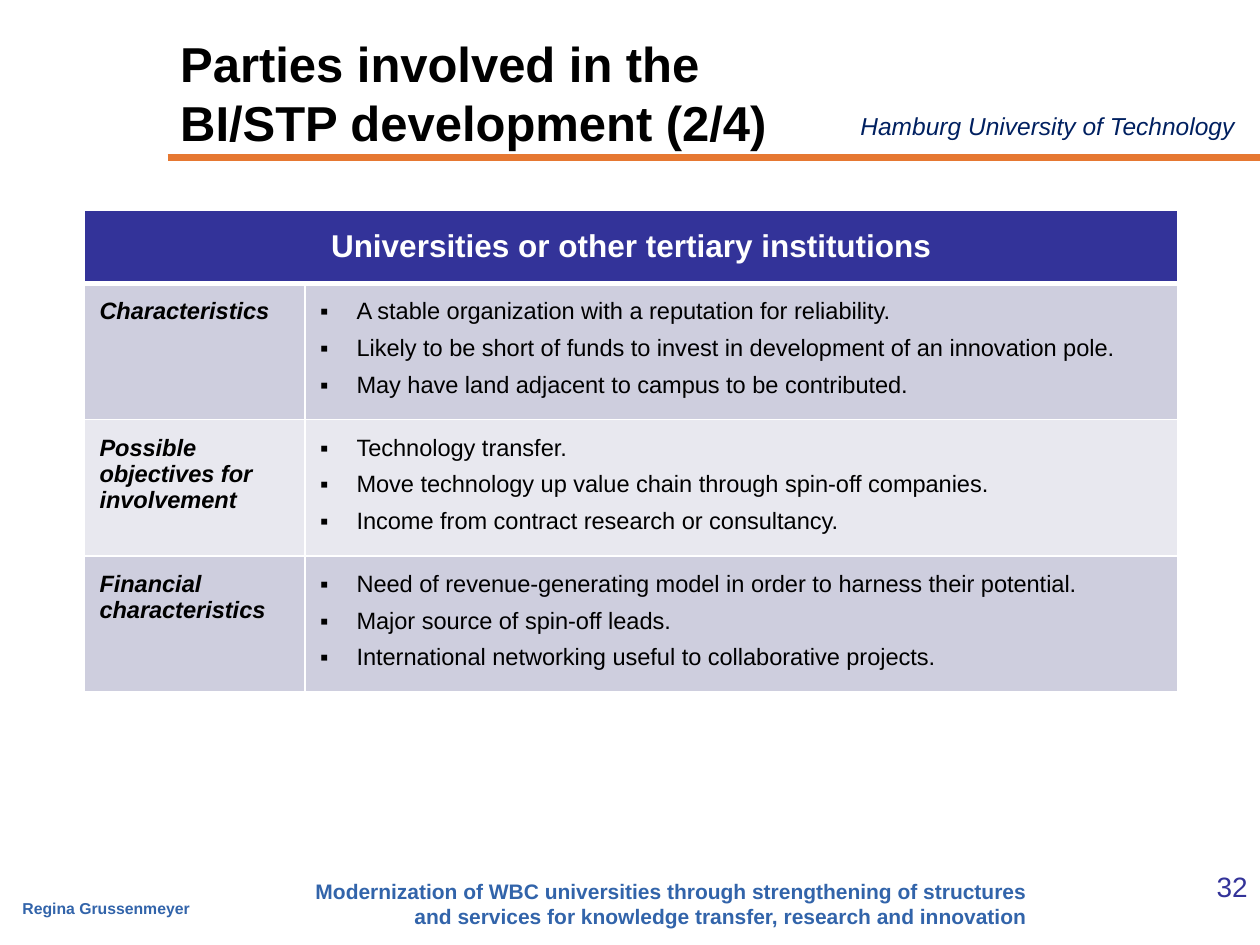
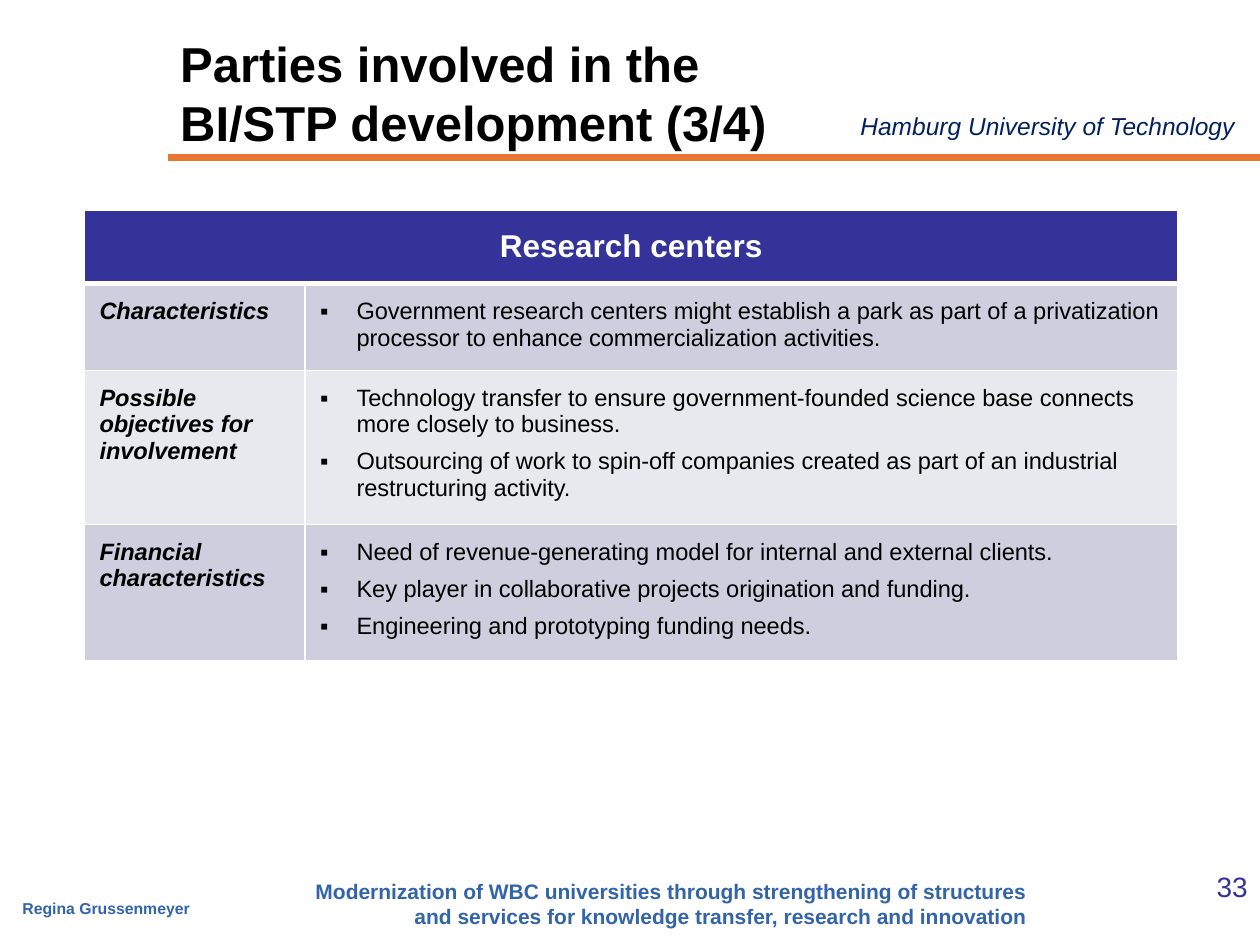
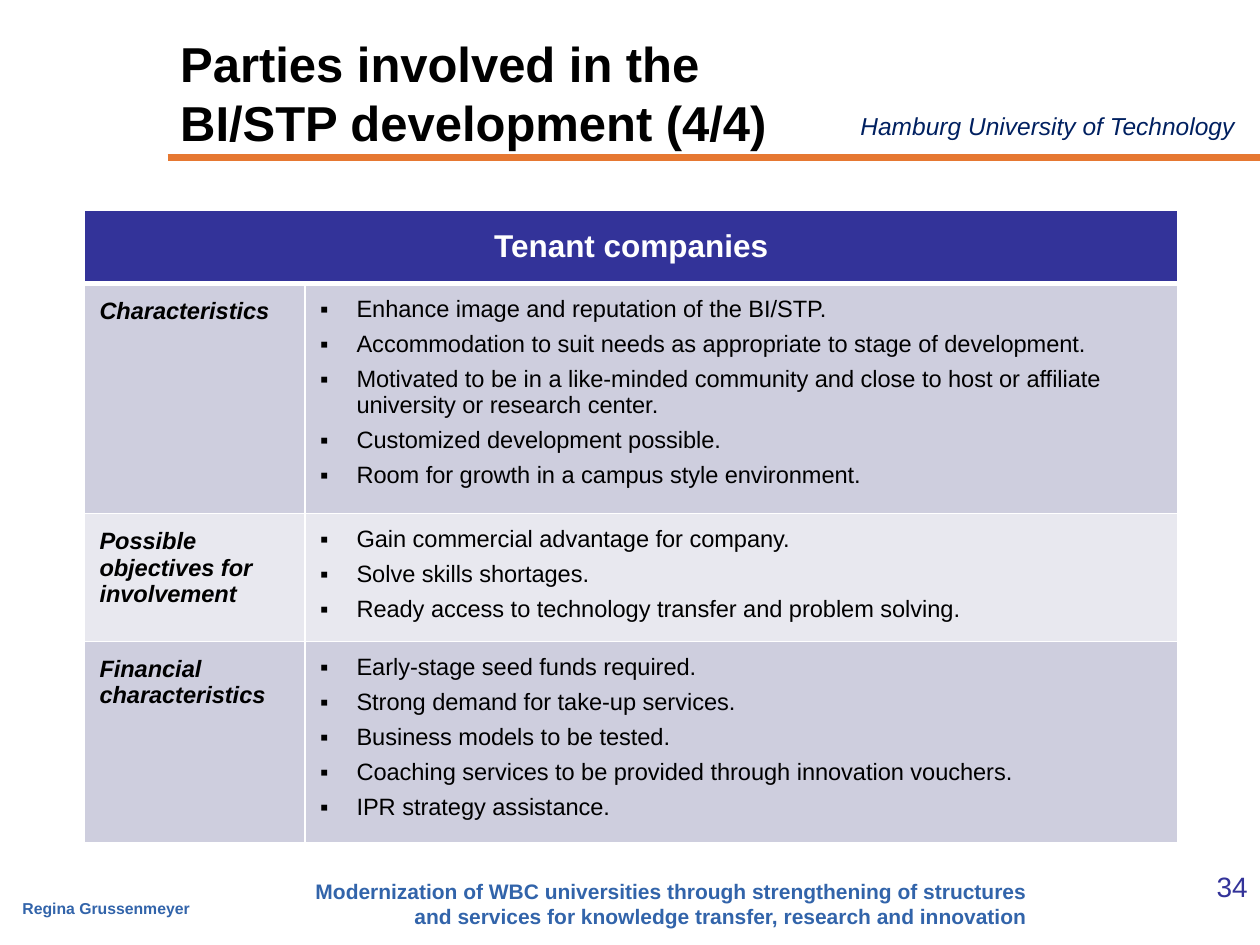
from lxml import etree
from pptx import Presentation
from pptx.dml.color import RGBColor
from pptx.enum import shapes, text
from pptx.oxml import ns, parse_xml
from pptx.util import Inches, Pt

ORANGE = RGBColor(0xE6, 0x78, 0x32)
FOOTER_BLUE = RGBColor(0x32, 0x64, 0xAA)
NAVY = RGBColor(0x00, 0x20, 0x60)
INDIGO = RGBColor(0x33, 0x33, 0x99)
BLACK = RGBColor(0x00, 0x00, 0x00)
WHITE = RGBColor(0xFF, 0xFF, 0xFF)
BAND_DARK = RGBColor(0xCE, 0xCE, 0xDE)
BAND_LIGHT = RGBColor(0xE8, 0xE8, 0xEF)

LEFT, CENTER, RIGHT = text.PP_ALIGN.LEFT, text.PP_ALIGN.CENTER, text.PP_ALIGN.RIGHT
FIRST_PAGE = 32
ROW_LABELS = ["Characteristics", "Possible objectives for involvement",
              "Financial characteristics"]
TITLE_STYLE = {"size": Pt(28), "bold": True}
HEADER_STYLE = {"size": Pt(18), "bold": True}
LABEL_STYLE = {"size": Pt(13.5), "bold": True, "italic": True}
BULLET_STYLE = {"size": Pt(13.5), "bold": False, "italic": False}
PAGE_STYLE = {"size": Pt(16)}

# Table heading, bullets of each row, bullet cell margin, space after a bullet
parties = [
    ("Universities or other tertiary institutions", [
        ["A stable organization with a reputation for reliability.",
         "Likely to be short of funds to invest in development of an innovation pole.",
         "May have land adjacent to campus to be contributed."],
        ["Technology transfer.",
         "Move technology up value chain through spin-off companies.",
         "Income from contract research or consultancy."],
        ["Need of revenue-generating model in order to harness their potential.",
         "Major source of spin-off leads.",
         "International networking useful to collaborative projects."],
    ], 0.12, 6),
    ("Research centers", [
        ["Government research centers might establish a park as part of a privatization "
         "processor to enhance commercialization activities."],
        ["Technology transfer to ensure government-founded science base connects more "
         "closely to business.",
         "Outsourcing of work to spin-off companies created as part of an industrial "
         "restructuring activity."],
        ["Need of revenue-generating model for internal and external clients.",
         "Key player in collaborative projects origination and funding.",
         "Engineering and prototyping funding needs."],
    ], 0.12, 6),
    ("Tenant companies", [
        ["Enhance image and reputation of the BI/STP.",
         "Accommodation to suit needs as appropriate to stage of development.",
         "Motivated to be in a like-minded community and close to host or affiliate "
         "university or research center.",
         "Customized development possible.",
         "Room for growth in a campus style environment."],
        ["Gain commercial advantage for company.",
         "Solve skills shortages.",
         "Ready access to technology transfer and problem solving."],
        ["Early-stage seed funds required.",
         "Strong demand for take-up services.",
         "Business models to be tested.",
         "Coaching services to be provided through innovation vouchers.",
         "IPR strategy assistance."],
    ], 0.1, 5),
]


def write(paragraph, words, style, color, align=LEFT):
    paragraph.alignment = align
    run = paragraph.add_run()
    run.text = words
    run.font.name = "Arial"
    run.font.color.rgb = color
    for attribute, value in style.items():
        setattr(run.font, attribute, value)


def format_cell(cell, color, margin, top, bottom):
    """Set margins, white borders (top and bottom in points) and fill."""
    cell.margin_left = cell.margin_right = Inches(0.12)
    cell.margin_top = cell.margin_bottom = Inches(margin)
    properties = cell._tc.get_or_add_tcPr()
    for side, width in {"L": 1, "R": 1, "T": top, "B": bottom}.items():
        properties.append(parse_xml(
            f'<a:ln{side} {ns.nsdecls("a")} w="{Pt(width)}"><a:solidFill>'
            f'<a:srgbClr val="{WHITE}"/></a:solidFill></a:ln{side}>'))
    cell.fill.solid()
    cell.fill.fore_color.rgb = color


deck = Presentation()
deck.slide_width, deck.slide_height = Inches(10), Inches(7.5)
layout = deck.slide_layouts[5]
slides = [deck.slides.add_slide(layout) for _ in parties]

# Shared rule and captions are drawn on a slide, then moved to the layout
drawing = slides[0].shapes
rule = drawing.add_connector(shapes.MSO_CONNECTOR.STRAIGHT,
                             Inches(1.33), Inches(1.25), Inches(10), Inches(1.25))
rule.line.color.rgb = ORANGE
rule.line.width = Pt(4.5)
etree.SubElement(rule.element.spPr, ns.qn("a:effectLst"))
layout.shapes.element.append(rule.element)

captions = [
    ("Regina Grussenmeyer", (0.08, 7.08, 2.25, 0.25), True, LEFT, FOOTER_BLUE,
     {"size": Pt(9), "bold": True}),
    ("Modernization of WBC universities through strengthening of structures and "
     "services for knowledge transfer, research and innovation",
     (2.33, 6.92, 5.92, 0.5), True, RIGHT, FOOTER_BLUE, {"size": Pt(12), "bold": True}),
    ("Hamburg University of Technology", (6.73, 0.83, 3.19, 0.34), False, LEFT, NAVY,
     {"size": Pt(14), "italic": True}),
]
for words, place, wraps, align, color, style in captions:
    caption = drawing.add_textbox(*map(Inches, place))
    caption.text_frame.word_wrap = wraps
    caption.text_frame.auto_size = text.MSO_AUTO_SIZE.SHAPE_TO_FIT_TEXT
    write(caption.text_frame.paragraphs[0], words, style, color, align)
    layout.shapes.element.append(caption.element)

for index, (slide, party) in enumerate(zip(slides, parties)):
    heading, row_bullets, bullet_margin, bullet_gap = party

    title = slide.shapes.title
    title.left, title.top = Inches(1.33), Inches(0)
    title.width, title.height = Inches(5.33), Inches(1.25)
    title.text_frame.auto_size = text.MSO_AUTO_SIZE.NONE
    title.text_frame.vertical_anchor = text.MSO_ANCHOR.BOTTOM
    write(title.text_frame.paragraphs[0],
          f"Parties involved in the BI/STP development ({index + 2}/4)",
          TITLE_STYLE, BLACK)

    page = slide.shapes.add_textbox(Inches(9.25), Inches(6.85), Inches(0.75), Inches(0.4))
    page.text_frame.word_wrap = True
    write(page.text_frame.paragraphs[0], str(FIRST_PAGE + index), PAGE_STYLE, INDIGO, RIGHT)

    table = slide.shapes.add_table(4, 2, Inches(0.67), Inches(1.67),
                                   Inches(8.68), Inches(1.81)).table
    table.horz_banding = False
    table.columns[0].width, table.columns[1].width = Inches(1.75), Inches(6.93)
    for row, height in zip(table.rows, (0.58, 0.41, 0.41, 0.41)):
        row.height = Inches(height)

    header = table.cell(0, 0)
    header.merge(table.cell(0, 1))
    for cell in table.rows[0].cells:
        format_cell(cell, INDIGO, 0.08, 1, 3)
    header.vertical_anchor = text.MSO_ANCHOR.MIDDLE
    write(header.text_frame.paragraphs[0], heading, HEADER_STYLE, WHITE, CENTER)

    for number, (label, bullets) in enumerate(zip(ROW_LABELS, row_bullets), 1):
        band = BAND_DARK if number % 2 else BAND_LIGHT
        top_border = 3 if number == 1 else 1
        label_cell, bullet_cell = table.rows[number].cells
        format_cell(label_cell, band, 0.12, top_border, 1)
        format_cell(bullet_cell, band, bullet_margin, top_border, 1)
        write(label_cell.text_frame.paragraphs[0], label, LABEL_STYLE, BLACK)

        frame = bullet_cell.text_frame
        for position, bullet in enumerate(bullets):
            paragraph = frame.add_paragraph() if position else frame.paragraphs[0]
            properties = paragraph._p.get_or_add_pPr()
            properties.set("marL", str(Inches(0.29)))
            properties.set("indent", str(-Inches(0.29)))
            etree.SubElement(properties, ns.qn("a:buFont"), typeface="Arial")
            etree.SubElement(properties, ns.qn("a:buChar"), char="▪")
            paragraph.space_after = Pt(bullet_gap)
            write(paragraph, bullet, BULLET_STYLE, BLACK)

deck.save("out.pptx")
